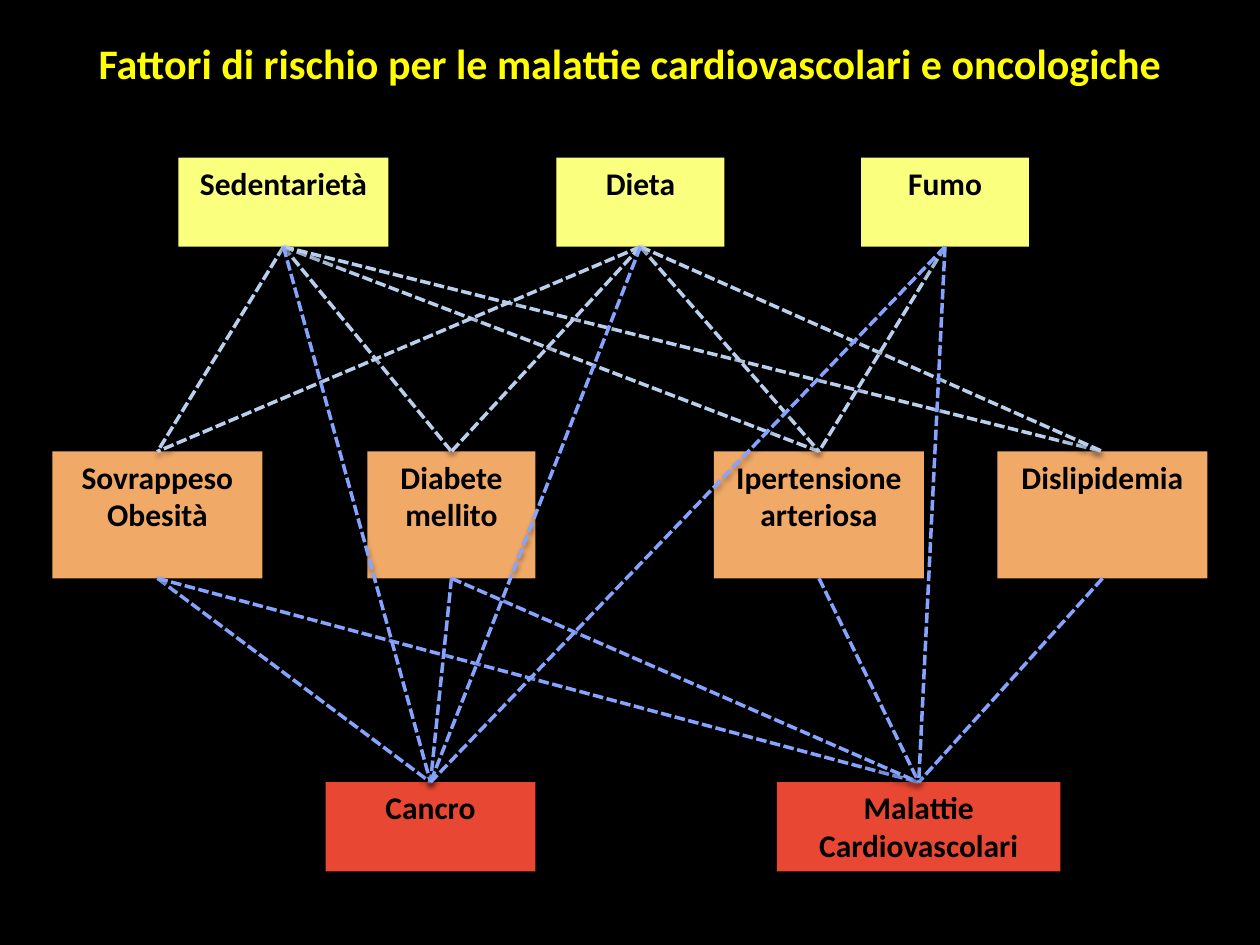
from lxml.etree import SubElement
from pptx import Presentation
from pptx.dml.color import RGBColor
from pptx.enum.dml import MSO_LINE
from pptx.enum.shapes import MSO_CONNECTOR, MSO_SHAPE
from pptx.enum.text import MSO_ANCHOR, MSO_AUTO_SIZE, PP_ALIGN
from pptx.oxml.ns import qn
from pptx.util import Pt

TITLE = "Fattori di rischio per le malattie cardiovascolari e oncologiche"
ROWS = [
    {"top": 90, "height": 51, "fill": "FAFF7D", "boxes": [
        ("Sedentarietà", 102, 120), ("Dieta", 318, 96), ("Fumo", 492, 96)]},
    {"top": 258, "height": 72.5, "fill": "F1A967", "boxes": [
        ("Sovrappeso\nObesità", 30, 120), ("Diabete mellito", 210, 96),
        ("Ipertensione arteriosa", 408, 120), ("Dislipidemia", 570, 120)]},
    {"top": 447, "height": 51, "fill": "E74733", "boxes": [
        ("Cancro", 186, 120), ("Malattie Cardiovascolari", 444, 162)]},
]
TO_CONDITION, TO_DISEASE = "B8D0ED", "85A3FF"
LINKS = [
    (TO_DISEASE, "Sovrappeso\nObesità", ["Cancro", "Malattie Cardiovascolari"]),
    (TO_DISEASE, "Diabete mellito", ["Cancro", "Malattie Cardiovascolari"]),
    (TO_DISEASE, "Ipertensione arteriosa", ["Malattie Cardiovascolari"]),
    (TO_DISEASE, "Dislipidemia", ["Malattie Cardiovascolari"]),
    (TO_CONDITION, "Sedentarietà", [name for name, *_ in ROWS[1]["boxes"]]),
    (TO_CONDITION, "Dieta", [name for name, *_ in ROWS[1]["boxes"]]),
    (TO_CONDITION, "Fumo", ["Ipertensione arteriosa"]),
    (TO_DISEASE, "Sedentarietà", ["Cancro"]),
    (TO_DISEASE, "Dieta", ["Cancro"]),
    (TO_DISEASE, "Fumo", ["Cancro", "Malattie Cardiovascolari"]),
]
TOP_SITE, BOTTOM_SITE = 0, 2


def color(hex_value):
    return RGBColor.from_string(hex_value)


def paint(fill, hex_value):
    fill.solid()
    fill.fore_color.rgb = color(hex_value)


def add_shadow(effects, distance, opacity):
    shadow = SubElement(effects, qn("a:outerShdw"), blurRad=str(Pt(3.1)),
                        dist=str(Pt(distance)), dir="5400000", rotWithShape="0")
    black = SubElement(shadow, qn("a:srgbClr"), val="000000")
    SubElement(black, qn("a:alpha"), val=str(opacity * 1000))


def write(shape, text, size, hex_value):
    frame = shape.text_frame
    frame.text = text
    frame_format = {
        "word_wrap": True, "auto_size": MSO_AUTO_SIZE.NONE,
        "vertical_anchor": MSO_ANCHOR.TOP,
        "margin_left": Pt(7.2), "margin_right": Pt(7.2),
        "margin_top": Pt(3.6), "margin_bottom": Pt(3.6)}
    for name, value in frame_format.items():
        setattr(frame, name, value)
    for paragraph in frame.paragraphs:
        paragraph.alignment = PP_ALIGN.CENTER
        font_format = {"name": "Calibri", "size": Pt(size), "bold": True}
        for name, value in font_format.items():
            setattr(paragraph.font, name, value)
        paragraph.font.color.rgb = color(hex_value)


def add_box(slide, text, left, width, row):
    box = slide.shapes.add_shape(MSO_SHAPE.RECTANGLE, Pt(left), Pt(row["top"]),
                                 Pt(width), Pt(row["height"]))
    paint(box.fill, row["fill"])
    box.line.fill.background()
    box.shadow.inherit = False
    add_shadow(box._element.spPr.find(qn("a:effectLst")), 1.8, 35)
    write(box, text, 18, "000000")
    return box


def add_link(slide, source, target, hex_value):
    link = slide.shapes.add_connector(MSO_CONNECTOR.STRAIGHT, 0, 0, 0, 0)
    link.begin_connect(source, BOTTOM_SITE)
    link.end_connect(target, TOP_SITE)
    paint(link.line.fill, hex_value)
    link.line.width = Pt(2)
    link.line.dash_style = MSO_LINE.SQUARE_DOT
    add_shadow(SubElement(link._element.spPr, qn("a:effectLst")), 1.6, 38)


def main():
    presentation = Presentation()
    presentation.slide_width, presentation.slide_height = Pt(720), Pt(540)
    slide = presentation.slides.add_slide(presentation.slide_layouts[5])
    paint(slide.background.fill, "000000")

    title = slide.shapes.title
    placement = {"left": 18, "top": 18, "width": 684, "height": 36.5}
    for name, value in placement.items():
        setattr(title, name, Pt(value))
    write(title, TITLE, 24, "FFFF00")

    boxes = {text: add_box(slide, text, left, width, row)
             for row in ROWS for text, left, width in row["boxes"]}
    for hex_value, source, targets in LINKS:
        for target in targets:
            add_link(slide, boxes[source], boxes[target], hex_value)
    presentation.save("out.pptx")


if __name__ == "__main__":
    main()
